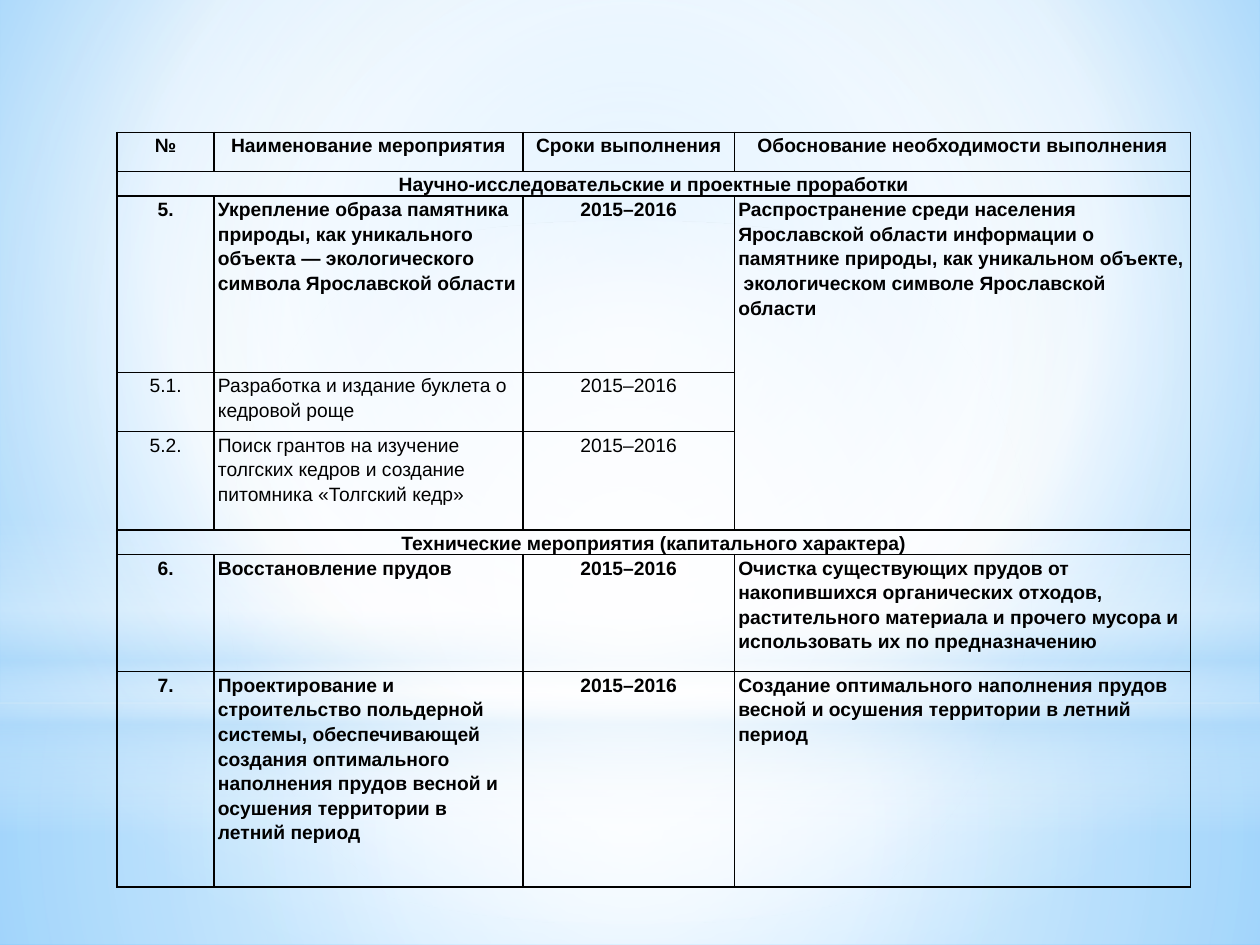
"""Build a slide with a table of planned measures on a soft blue background."""
from lxml.etree import SubElement
from pptx import Presentation
from pptx.dml.color import RGBColor
from pptx.enum.shapes import MSO_SHAPE
from pptx.enum.text import PP_ALIGN
from pptx.oxml import parse_xml
from pptx.oxml.ns import nsdecls, qn
from pptx.util import Inches, Pt


def rgb(color):
    return RGBColor.from_string(color)


def gradient(fill, root, stops, to=None):
    fill.gradient()
    grad = root.find(".//" + qn("a:gradFill"))
    for child in list(grad):
        grad.remove(child)
    gs_lst = SubElement(grad, qn("a:gsLst"))
    for pos, color, alpha in stops:
        gs = SubElement(gs_lst, qn("a:gs"), pos=str(pos * 1000))
        clr = SubElement(gs, qn("a:srgbClr"), val=color)
        if alpha < 100:
            SubElement(clr, qn("a:alpha"), val=str(alpha * 1000))
    if to:
        circle = SubElement(grad, qn("a:path"), path="circle")
        sides = {side: str(v * 1000) for side, v in zip("ltrb", to)}
        SubElement(circle, qn("a:fillToRect"), **sides)
    else:
        SubElement(grad, qn("a:lin"), ang="5400000", scaled="0")


prs = Presentation()
prs.slide_width, prs.slide_height = Inches(10), Inches(7.5)
s = prs.slides.add_slide(prs.slide_layouts[6])
gradient(s.background.fill, s._element,
         [(0, "9ED5FF", 100), (60, "FFFFFF", 100), (100, "5BB9FF", 100)],
         (20, 10, 20, 60))

center = (50, 50, 50, 50)
glows = [
    (MSO_SHAPE.RECTANGLE, 5.58, 1.92, center,
     [(0, "FFFFFF", 91), (37, "FFFFFF", 76), (100, "B4DCFA", 79)]),
    (MSO_SHAPE.RECTANGLE, 0, 5.58, center,
     [(0, "FFFFFF", 89), (48, "FFFFFF", 62), (100, "B4DCFA", 79)]),
    (MSO_SHAPE.RECTANGLE, 4.12, 2.5, None,
     [(0, "FFFFFF", 0), (29, "FFFFFF", 30), (45, "B4DCFA", 40),
      (55, "FFFFFF", 26), (65, "B4DCFA", 60), (100, "FFFFFF", 0)]),
    (MSO_SHAPE.OVAL, 1.75, 5.58, center,
     [(0, "FFFFFF", 100), (56, "FFFFFF", 0)]),
]
for kind, top, height, to, stops in glows:
    sp = s.shapes.add_shape(kind, 0, Inches(top), Inches(10), Inches(height))
    sp.shadow.inherit = False
    sp.line.fill.background()
    gradient(sp.fill, sp._element, stops, to)

years = "2015–2016"
rows = [
    (0.31, ["№", "Наименование мероприятия", "Сроки выполнения",
            "Обоснование необходимости выполнения"]),
    (0.19, ["Научно-исследовательские и проектные проработки"]),
    (1.4, ["5.", "Укрепление образа памятника природы, как уникального объекта — "
           "экологического символа Ярославской области", years,
           "Распространение среди населения Ярославской области информации о "
           "памятнике природы, как уникальном объекте,  экологическом символе "
           "Ярославской области"]),
    (0.47, ["5.1.", "Разработка и издание буклета о кедровой роще", years]),
    (0.78, ["5.2.", "Поиск грантов на изучение толгских кедров и создание "
            "питомника «Толгский кедр»", years]),
    (0.19, ["Технические мероприятия (капитального характера)"]),
    (0.93, ["6.", "Восстановление прудов", years,
            "Очистка существующих прудов от накопившихся органических отходов, "
            "растительного материала и прочего мусора и использовать их по "
            "предназначению"]),
    (1.71, ["7.", "Проектирование и строительство польдерной системы, "
            "обеспечивающей создания оптимального наполнения прудов весной и "
            "осушения территории в летний период", years,
            "Создание оптимального наполнения прудов весной и осушения "
            "территории в летний период"]),
]
cols = [0.77, 2.45, 1.68, 3.62]
tbl = s.shapes.add_table(len(rows), len(cols), Inches(0.93), Inches(1.05),
                         Inches(sum(cols)), Inches(5.98)).table
tbl.first_row = tbl.horz_banding = False
for col, width in zip(tbl.columns, cols):
    col.width = Inches(width)

for i, (height, texts) in enumerate(rows):
    tbl.rows[i].height = Inches(height)
    if len(texts) == 1:
        tbl.cell(i, 0).merge(tbl.cell(i, 3))
    for j in range(len(cols)):
        cell = tbl.cell(i, j)
        cell.margin_left = cell.margin_right = Inches(0.03)
        cell.margin_top = cell.margin_bottom = 0
        cell.fill.background()
        tcPr = cell._tc.get_or_add_tcPr()
        for k, side in enumerate(["lnL", "lnR", "lnT", "lnB"]):
            tcPr.insert(k, parse_xml(
                f'<a:{side} {nsdecls("a")} w="12700"><a:solidFill>'
                f'<a:srgbClr val="000000"/></a:solidFill></a:{side}>'))
        p = cell.text_frame.paragraphs[0]
        if j < len(texts):
            p.text = texts[j]
        p.line_spacing = 1.15
        p.alignment = PP_ALIGN.CENTER if i == 0 or j in (0, 2) else PP_ALIGN.LEFT
        p.font.name, p.font.size = "Arial", Pt(11)
        p.font.bold = len(texts) != 3
        p.font.color.rgb = rgb("000000")
tbl.cell(2, 3).merge(tbl.cell(4, 3))

prs.save("out.pptx")
